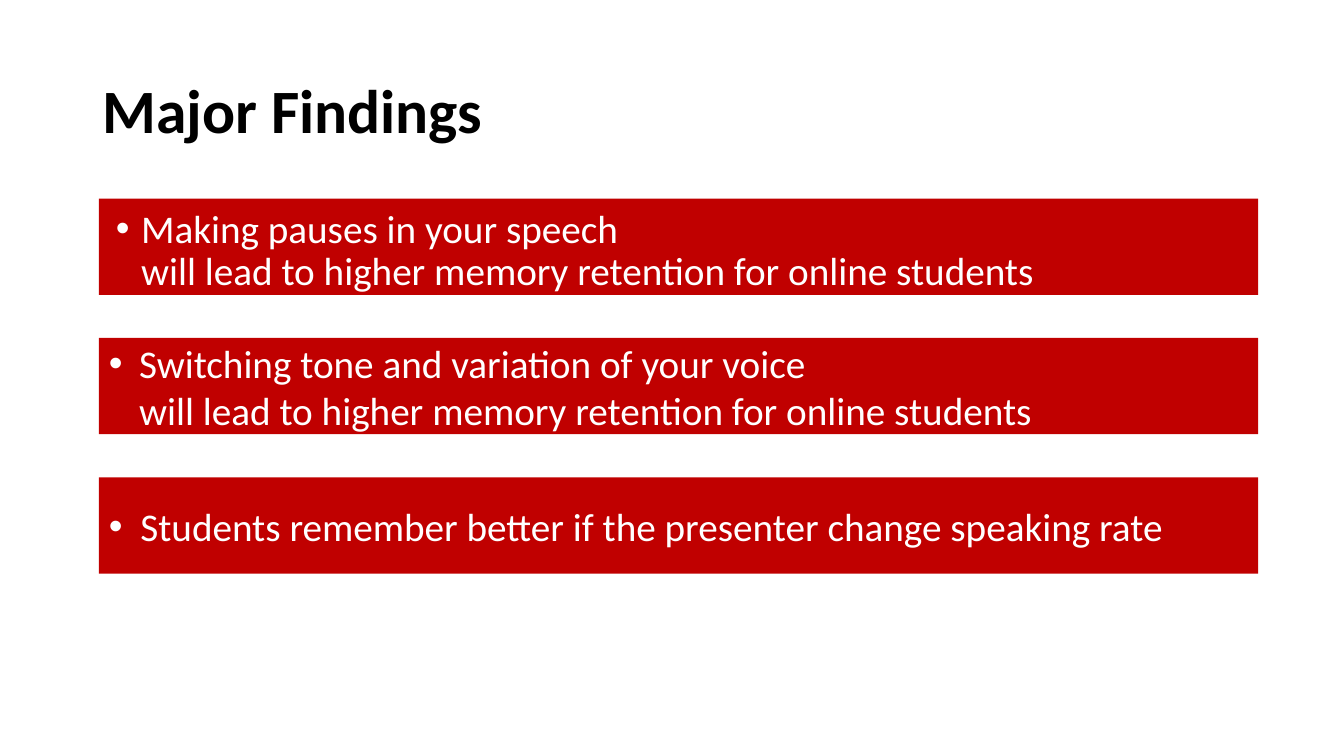
import lxml.etree
import pptx
import pptx.dml.color
import pptx.enum.shapes
import pptx.enum.text
import pptx.oxml.ns
import pptx.util

Pt = pptx.util.Pt
MIDDLE = pptx.enum.text.MSO_ANCHOR.MIDDLE
RETENTION = "will lead to higher memory retention for online students"


def color(hex_code):
    return pptx.dml.color.RGBColor.from_string(hex_code)


def write(paragraph, text, size, hex_code, bold=False):
    paragraph.text = text
    paragraph.alignment = pptx.enum.text.PP_ALIGN.LEFT
    paragraph.font.name = "Calibri"
    paragraph.font.size = Pt(size)
    paragraph.font.bold = bold
    paragraph.font.color.rgb = color(hex_code)


def add_bullet(paragraph, indent):
    properties = paragraph._p.get_or_add_pPr()
    properties.set("marL", str(Pt(indent)))
    properties.set("indent", str(-Pt(indent)))
    for tag, attribute, value in (("a:buFont", "typeface", "Arial"), ("a:buChar", "char", "•")):
        lxml.etree.SubElement(properties, pptx.oxml.ns.qn(tag)).set(attribute, value)


def add_text_frame(slide, left, top, width, height):
    frame = slide.shapes.add_textbox(Pt(left), Pt(top), Pt(width), Pt(height)).text_frame
    frame.word_wrap = True
    return frame


def add_title(slide, left, top, width, height):
    frame = add_text_frame(slide, left, top, width, height)
    frame.vertical_anchor = MIDDLE
    heading = frame.paragraphs[0]
    heading.line_spacing = 0.9
    write(heading, "Major Findings", 44, "000000", bold=True)


def add_banner(slide, left, top, width, height):
    banner = slide.shapes.add_shape(
        pptx.enum.shapes.MSO_SHAPE.RECTANGLE, Pt(left), Pt(top), Pt(width), Pt(height))
    banner.shadow.inherit = False
    banner.fill.solid()
    banner.fill.fore_color.rgb = color("C00000")
    banner.line.fill.background()
    banner.text_frame.word_wrap = True
    banner.text_frame.vertical_anchor = MIDDLE
    return banner.text_frame


def add_findings(slide, left, top, width, height, pitch):
    # Pauses: the text lies in its own box, slightly offset from the banner
    add_banner(slide, left, top, width, height)
    pauses = add_text_frame(slide, left + 5, top + 4.3, width, 80.6).paragraphs[0]
    add_bullet(pauses, 18)
    pauses.line_spacing = 0.9
    pauses.space_before = Pt(10)
    write(pauses, "Making pauses in your speech \n" + RETENTION, 28, "FFFFFF")

    # Tone and speaking rate: the text lies in the banner
    findings = (
        ("Switching tone and variation of your voice \n" + RETENTION, 21.6),
        ("Students remember better if the presenter change speaking rate", 22.5),
    )
    for row, (finding, indent) in enumerate(findings, start=1):
        paragraph = add_banner(slide, left, top + row * pitch, width, height).paragraphs[0]
        add_bullet(paragraph, indent)
        write(paragraph, finding, 28, "FFFFFF")


def main():
    presentation = pptx.Presentation()
    presentation.slide_width = Pt(960)
    presentation.slide_height = Pt(540)
    slide = presentation.slides.add_slide(presentation.slide_layouts[6])
    add_title(slide, 66, 28.75, 828, 104.4)
    add_findings(slide, 70.7, 141.8, 828, 68.8, pitch=99.6)
    presentation.save("out.pptx")


if __name__ == "__main__":
    main()
